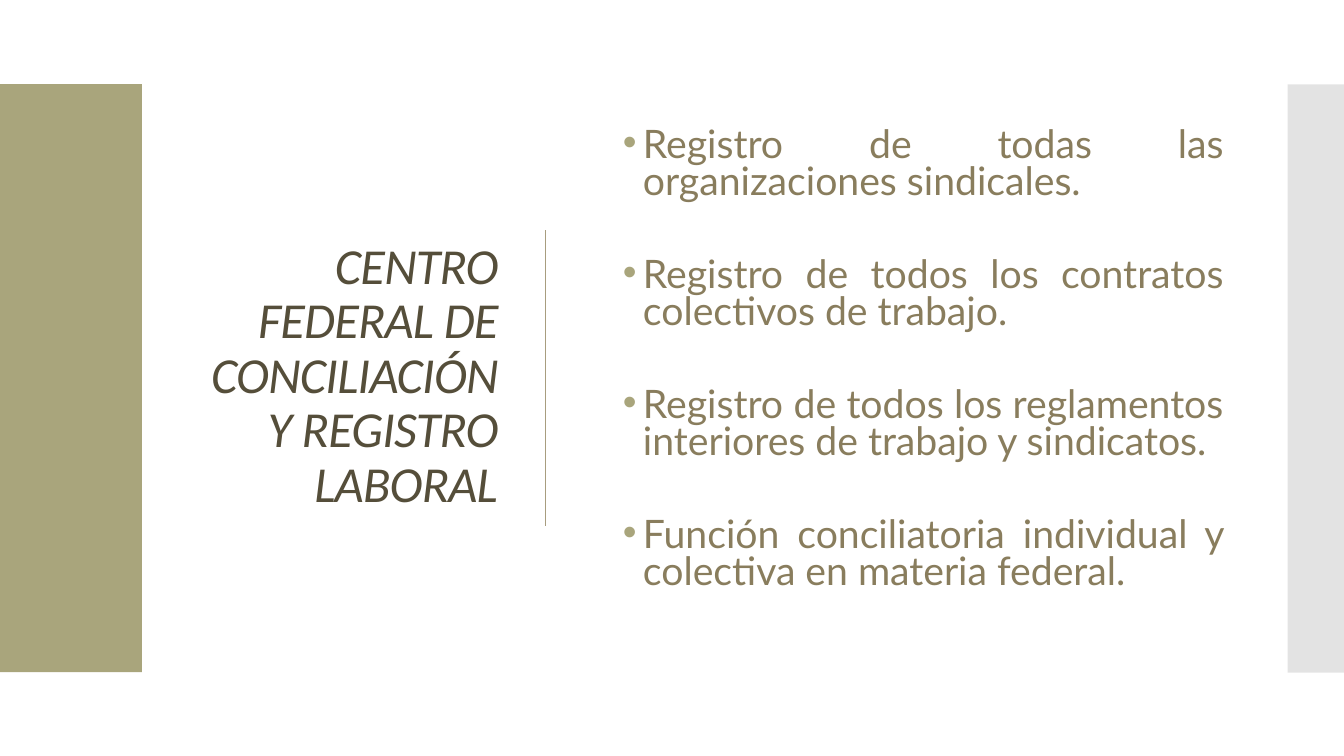
from lxml.etree import SubElement
from pptx import Presentation
from pptx.dml.color import RGBColor
from pptx.enum.shapes import MSO_CONNECTOR as Connector, MSO_SHAPE as Shape
from pptx.enum.text import MSO_ANCHOR as Anchor, MSO_AUTO_SIZE as AutoSize, PP_ALIGN as Align
from pptx.oxml.ns import qn
from pptx.util import Cm, Pt

OLIVE, GREY, DIVIDER = "A9A57C", "C8C8C8", "A89D7F"
TITLE_COLOR, BODY_COLOR = "554E3A", "897D5D"
TITLE = "CENTRO FEDERAL DE CONCILIACIÓN Y REGISTRO LABORAL"
FUNCTIONS = [
    "Registro de todas las organizaciones sindicales.",
    "Registro de todos los contratos colectivos de trabajo.",
    "Registro de todos los reglamentos interiores de trabajo y sindicatos.",
    "Función conciliatoria individual y colectiva en materia federal.",
]


def color(hex_code):
    return RGBColor.from_string(hex_code)


def place(shape, left, top, width, height):
    shape.left, shape.top = Cm(left), Cm(top)
    shape.width, shape.height = Cm(width), Cm(height)


def add_bar(slide, left, top, width, height, fill, opacity=100):
    bar = slide.shapes.add_shape(Shape.RECTANGLE, Cm(left), Cm(top), Cm(width), Cm(height))
    bar.shadow.inherit = False
    bar.line.fill.background()
    bar.fill.solid()
    bar.fill.fore_color.rgb = color(fill)
    if opacity < 100:
        tint = bar.fill._xPr.find(qn("a:solidFill"))[0]
        SubElement(tint, qn("a:alpha"), val=str(opacity * 1000))


def add_divider(slide, x, top, bottom):
    divider = slide.shapes.add_connector(Connector.STRAIGHT, Cm(x), Cm(top), Cm(x), Cm(bottom))
    divider.line.color.rgb = color(DIVIDER)
    divider.line.width = Pt(1)
    SubElement(divider._element.spPr, qn("a:effectLst"))


def format_paragraph(paragraph, align, line_spacing, space_after, font, size, hex_code):
    paragraph.alignment = align
    paragraph.line_spacing = line_spacing
    paragraph.space_before = Pt(0)
    paragraph.space_after = Pt(space_after)
    for run in paragraph.runs:
        run.font.name = font
        run.font.size = Pt(size)
        run.font.color.rgb = color(hex_code)


def add_bullet(paragraph, indent, hanging):
    properties = paragraph._p.get_or_add_pPr()
    properties.set("marL", str(Cm(indent)))
    properties.set("indent", str(-Cm(hanging)))
    bullet_color = SubElement(properties, qn("a:buClr"))
    SubElement(bullet_color, qn("a:srgbClr"), val=OLIVE)
    SubElement(properties, qn("a:buFont"), typeface="Arial")
    SubElement(properties, qn("a:buChar"), char="•")


def fill_title(title):
    place(title, 4.27, 2.39, 8.53, 14.22)
    frame = title.text_frame
    frame.text = TITLE
    frame.word_wrap = True
    frame.auto_size = AutoSize.NONE
    frame.vertical_anchor = Anchor.MIDDLE
    heading = frame.paragraphs[0]
    format_paragraph(heading, Align.RIGHT, 0.9, 6, "Calibri", 36, TITLE_COLOR)
    for run in heading.runs:
        run.font.italic = True
        run.font._element.set("spc", "-60")


def fill_functions(body):
    place(body, 14.68, 2.39, 16.41, 14.22)
    frame = body.text_frame
    frame.text = "\n".join(FUNCTIONS)
    frame.word_wrap = True
    frame.auto_size = AutoSize.NONE
    frame.vertical_anchor = Anchor.TOP
    frame.margin_top = Cm(0.84)
    for item in frame.paragraphs:
        format_paragraph(item, Align.JUSTIFY, 0.8, 39, "Lato", 28, BODY_COLOR)
        add_bullet(item, 1.27, 0.51)


def main():
    deck = Presentation()
    deck.slide_width, deck.slide_height = Cm(33.87), Cm(19.05)
    slide = deck.slides.add_slide(deck.slide_layouts[1])
    fill_title(slide.shapes.title)
    fill_functions(slide.placeholders[1])
    add_bar(slide, 0, 2.12, 3.58, 14.82, OLIVE)
    add_bar(slide, 32.45, 2.13, 1.42, 14.82, GREY, opacity=50)
    add_divider(slide, 13.74, 5.8, 13.25)
    deck.save("out.pptx")


if __name__ == "__main__":
    main()
